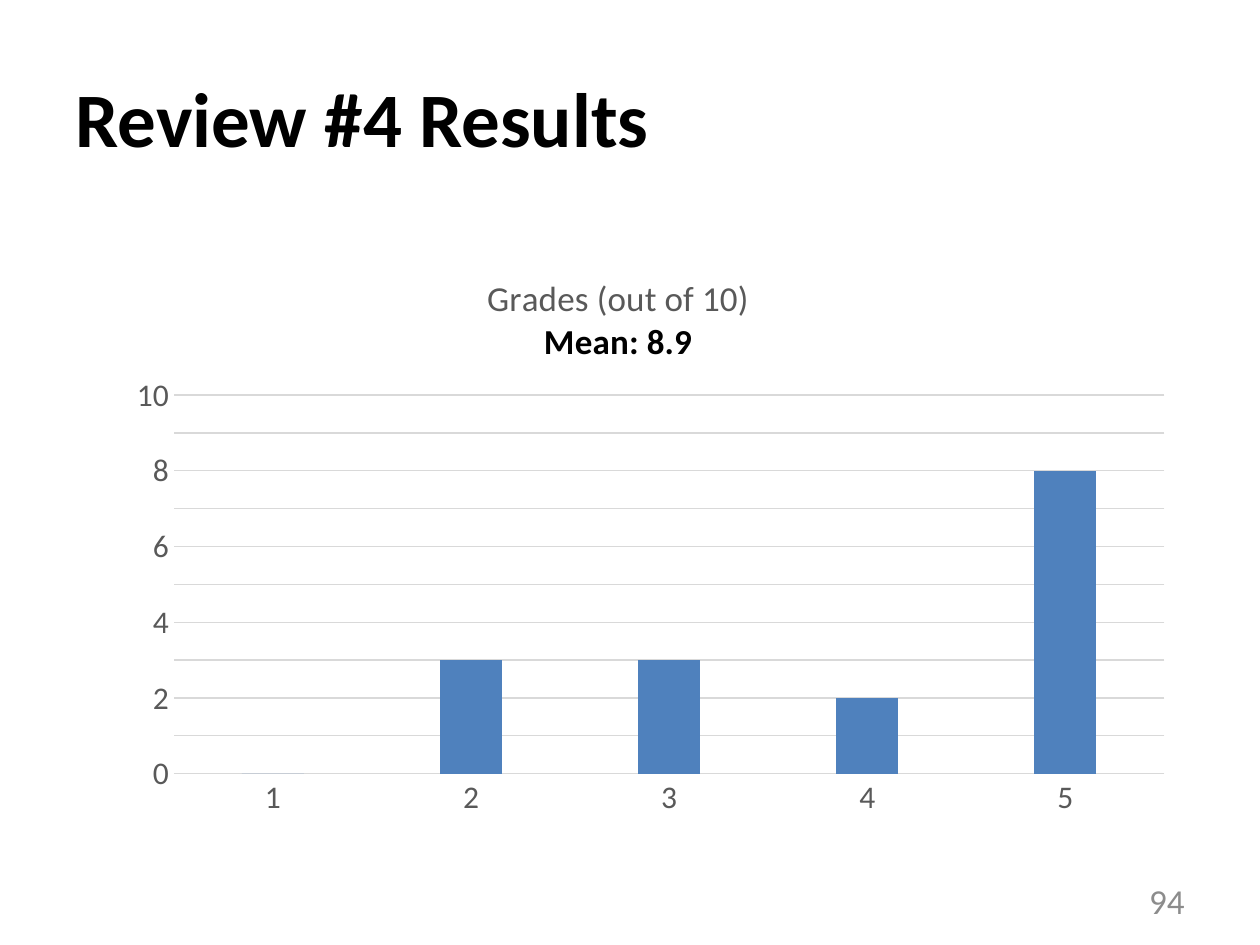
import copy
import dataclasses

import lxml.etree
import pptx
import pptx.chart.data
import pptx.dml.color
import pptx.enum.chart
import pptx.enum.text
import pptx.oxml.ns
import pptx.util

SCALE = 914400 / 126  # EMU in one px
FACE = "Calibri"
COLORS = {"ink": "000000", "label": "595959", "page": "8C8C8C",
          "grid": "D9D9D9", "bar": "4F81BD"}
ALIGN = pptx.enum.text.PP_ALIGN
MIDDLE = pptx.enum.text.MSO_ANCHOR.MIDDLE
qn = pptx.oxml.ns.qn


@dataclasses.dataclass(frozen=True)
class Box:
    """Place and size in px."""
    x: int
    y: int
    w: int
    h: int

    def emu(self) -> list[int]:
        return [round(n * SCALE) for n in dataclasses.astuple(self)]


TITLE = Box(63, 38, 1134, 157)
PAGE = Box(903, 876, 294, 50)
CHART = Box(116, 202, 1071, 627)
PLOT = Box(174, 395, 991, 379)
HEAD = Box(483, 271, 261, 86)


def rgb(name: str):
    return pptx.dml.color.RGBColor.from_string(COLORS[name])


def style(font, size: int, color: str, bold: bool = False) -> None:
    font.name, font.size, font.bold = FACE, pptx.util.Pt(size), bold
    font.color.rgb = rgb(color)


def write(para, text: str, *, size: int, color: str, bold: bool = False,
          align=ALIGN.LEFT) -> None:
    para.alignment = align
    run = para.add_run()
    run.text = text
    style(run.font, size, color, bold)


def rule(line) -> None:
    line.color.rgb = rgb("grid")
    line.width = pptx.util.Pt(0.75)


def pin(node, at: int, box: Box, sized: bool = False) -> None:
    """Fix a chart part at a place given in slide px."""
    for old in node.findall(qn("c:layout")):
        node.remove(old)
    layout = lxml.etree.Element(qn("c:layout"))
    manual = lxml.etree.SubElement(layout, qn("c:manualLayout"))
    parts = [("xMode", "edge"), ("yMode", "edge"),
             ("x", round((box.x - CHART.x) / CHART.w, 3)),
             ("y", round((box.y - CHART.y) / CHART.h, 3))]
    if sized:
        parts = [("layoutTarget", "inner"), *parts,
                 ("w", round(box.w / CHART.w, 3)),
                 ("h", round(box.h / CHART.h, 3))]
    for tag, val in parts:
        lxml.etree.SubElement(manual, qn(f"c:{tag}")).set("val", str(val))
    node.insert(at, layout)


def draw_grid(axis) -> None:
    """Give major and minor gridlines the same look."""
    axis.has_major_gridlines = axis.has_minor_gridlines = True
    rule(axis.major_gridlines.format.line)
    look = axis._element.find(f"{qn('c:majorGridlines')}/{qn('c:spPr')}")
    minor = axis._element.find(qn("c:minorGridlines"))
    minor.append(copy.deepcopy(look))


def draw_chart(slide) -> None:
    data = pptx.chart.data.CategoryChartData()
    data.categories = ["1", "2", "3", "4", "5"]
    data.add_series("Series 1", [0, 3, 3, 2, 8])
    kind = pptx.enum.chart.XL_CHART_TYPE.COLUMN_CLUSTERED
    chart = slide.shapes.add_chart(kind, *CHART.emu(), data).chart
    chart.has_legend = False
    style(chart.font, 10, "ink")

    head = chart.chart_title
    frame = head.text_frame
    write(frame.paragraphs[0], "Grades (out of 10)", size=20, color="label",
          align=ALIGN.CENTER)
    write(frame.add_paragraph(), "Mean: 8.9", size=20, color="ink",
          bold=True, align=ALIGN.CENTER)
    pin(head._element, 1, HEAD)
    pin(chart._chartSpace.chart.plotArea, 0, PLOT, sized=True)

    plot = chart.plots[0]
    plot.gap_width, plot.overlap, plot.vary_by_categories = 219, -27, False
    fill = plot.series[0].format.fill
    fill.solid()
    fill.fore_color.rgb = rgb("bar")

    cat, val = chart.category_axis, chart.value_axis
    none = pptx.enum.chart.XL_TICK_MARK.NONE
    for axis in (cat, val):
        axis.major_tick_mark = axis.minor_tick_mark = none
        style(axis.tick_labels.font, 18, "label")
    rule(cat.format.line)
    val.format.line.fill.background()
    val.minimum_scale, val.maximum_scale = 0, 10
    val.major_unit, val.minor_unit = 2, 1
    draw_grid(val)


def main() -> None:
    deck = pptx.Presentation()
    deck.slide_width, deck.slide_height = Box(0, 0, 1260, 945).emu()[2:]
    slide = deck.slides.add_slide(deck.slide_layouts[5])

    title = slide.shapes.title
    title.left, title.top, title.width, title.height = TITLE.emu()
    title.text_frame.vertical_anchor = MIDDLE
    write(title.text_frame.paragraphs[0], "Review #4 Results", size=44,
          color="ink", bold=True)

    page = slide.shapes.add_textbox(*PAGE.emu()).text_frame
    page.word_wrap, page.vertical_anchor = True, MIDDLE
    write(page.paragraphs[0], "94", size=20, color="page", align=ALIGN.RIGHT)

    draw_chart(slide)
    deck.save("out.pptx")


if __name__ == "__main__":
    main()
